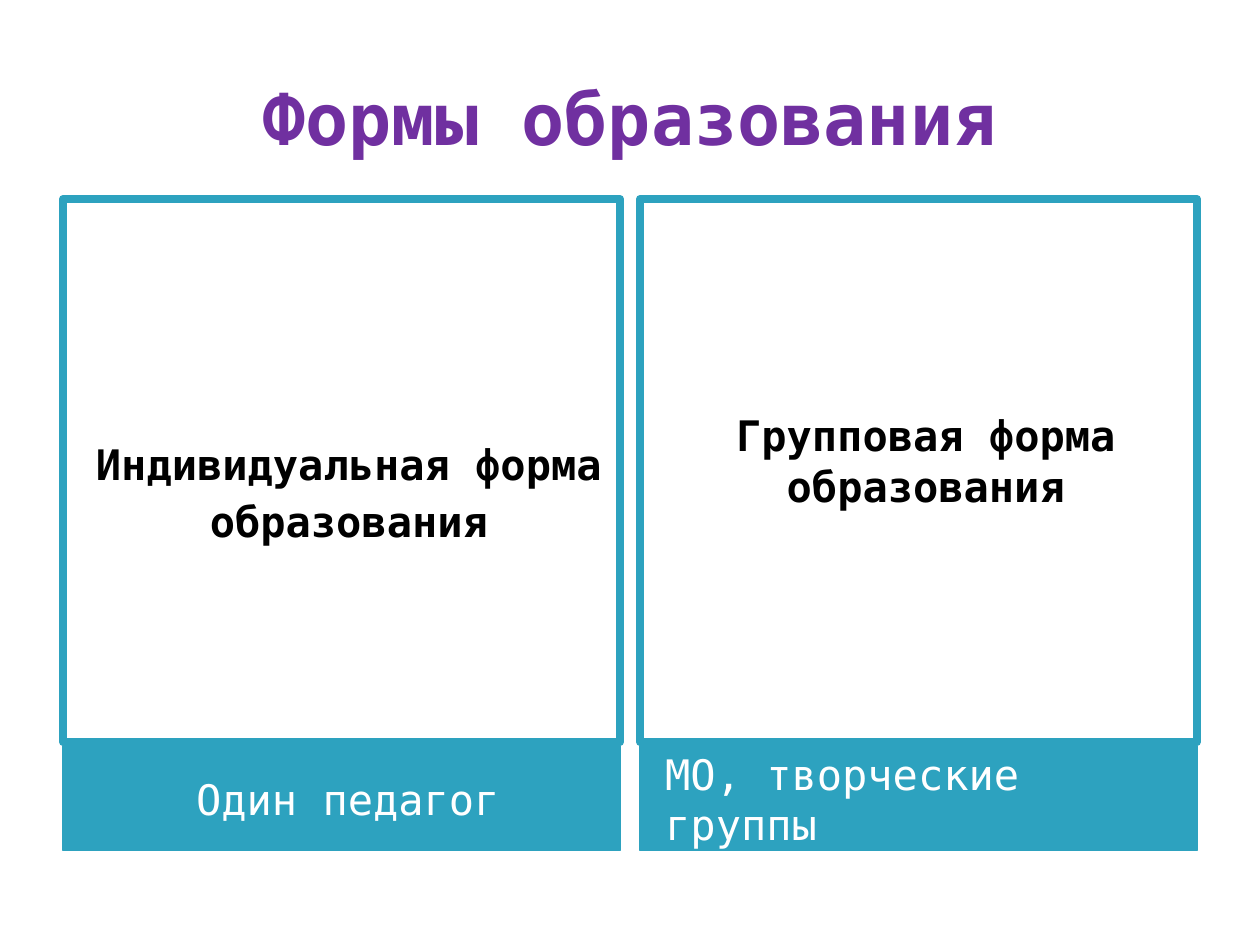
"""Build the slide that compares individual and group forms of education."""
from dataclasses import dataclass

from lxml import etree
from pptx import Presentation
from pptx import util as u
from pptx.dml.color import RGBColor
from pptx.enum import text as t
from pptx.oxml.ns import qn

FONT = "DejaVu Sans Mono"
PURPLE = RGBColor(0x70, 0x30, 0xA0)
TEAL = RGBColor(0x2D, 0xA2, 0xBF)
WHITE = RGBColor(0xFF, 0xFF, 0xFF)
BLACK = RGBColor(0x00, 0x00, 0x00)

MARGIN, COLUMN_WIDTH, COLUMN_STEP = 1.27, 11.23, 11.63
FRAME_TOP, FRAME_HEIGHT = 4.01, 10.95
CAPTION_TOP, CAPTION_HEIGHT = 15.04, 2.11


@dataclass
class Column:
    """One form of education with its caption."""
    heading: list[str]
    text_offset: float
    caption: str
    caption_alignment: t.PP_ALIGN


COLUMNS = [
    Column(["Индивидуальная форма", "образования"], 4.82, "Один педагог", t.PP_ALIGN.CENTER),
    Column(["Групповая форма образования"], 4.25, "МО, творческие группы", t.PP_ALIGN.LEFT),
]


def place(shape, left: float, top: float, width: float, height: float) -> None:
    """Move and size a shape in centimetres."""
    shape.left, shape.top = u.Cm(left), u.Cm(top)
    shape.width, shape.height = u.Cm(width), u.Cm(height)


def paint(shape, fill: RGBColor, line_width: float) -> None:
    """Fill a shape and give it a teal outline."""
    shape.fill.solid()
    shape.fill.fore_color.rgb = fill
    shape.line.color.rgb = TEAL
    shape.line.width = u.Pt(line_width)


def write(shape, lines: list[str], *, size: float = 24, color: RGBColor = BLACK,
          bold: bool = False, alignment: t.PP_ALIGN = t.PP_ALIGN.CENTER,
          anchor: t.MSO_ANCHOR = t.MSO_ANCHOR.MIDDLE,
          left_inset: float = 0.25, top_inset: float = 0.13) -> None:
    """Write unbulleted paragraphs in one format."""
    frame = shape.text_frame
    frame.word_wrap = True
    frame.auto_size = t.MSO_AUTO_SIZE.NONE
    frame.vertical_anchor = anchor
    frame.margin_left, frame.margin_top = u.Cm(left_inset), u.Cm(top_inset)
    frame.text = "\n".join(lines)
    for index, paragraph in enumerate(frame.paragraphs):
        properties = paragraph._p.get_or_add_pPr()
        properties.set("marL", "0")
        properties.set("indent", "0")
        etree.SubElement(properties, qn("a:buNone"))
        paragraph.alignment = alignment
        paragraph.space_before = u.Pt(4 if index else 0)
        for run in paragraph.runs:
            run.font.name = FONT
            run.font.size = u.Pt(size)
            run.font.bold = bold
            run.font.color.rgb = color


def draw_column(column: Column, left: float, caption, frame) -> None:
    """Draw a framed heading above its filled caption."""
    place(caption, left, CAPTION_TOP, COLUMN_WIDTH, CAPTION_HEIGHT)
    paint(caption, TEAL, 0.75)
    write(caption, [column.caption], color=WHITE,
          alignment=column.caption_alignment, left_inset=0.51)
    place(frame, left, FRAME_TOP, COLUMN_WIDTH, FRAME_HEIGHT)
    paint(frame, WHITE, 4.5)
    write(frame, column.heading, bold=True, anchor=t.MSO_ANCHOR.TOP,
          left_inset=0.55, top_inset=column.text_offset)


def main() -> None:
    """Create and save the presentation."""
    presentation = Presentation()
    presentation.slide_width, presentation.slide_height = u.Cm(25.4), u.Cm(19.05)
    slide = presentation.slides.add_slide(presentation.slide_layouts.get_by_name("Comparison"))
    title, *bodies = slide.placeholders
    place(title, MARGIN, 0.76, 22.86, 3.18)
    write(title, ["Формы образования"], size=41, color=PURPLE, bold=True)
    for index, column in enumerate(COLUMNS):
        caption, frame = bodies[2 * index:2 * index + 2]
        draw_column(column, MARGIN + index * COLUMN_STEP, caption, frame)
    presentation.save("out.pptx")


if __name__ == "__main__":
    main()
